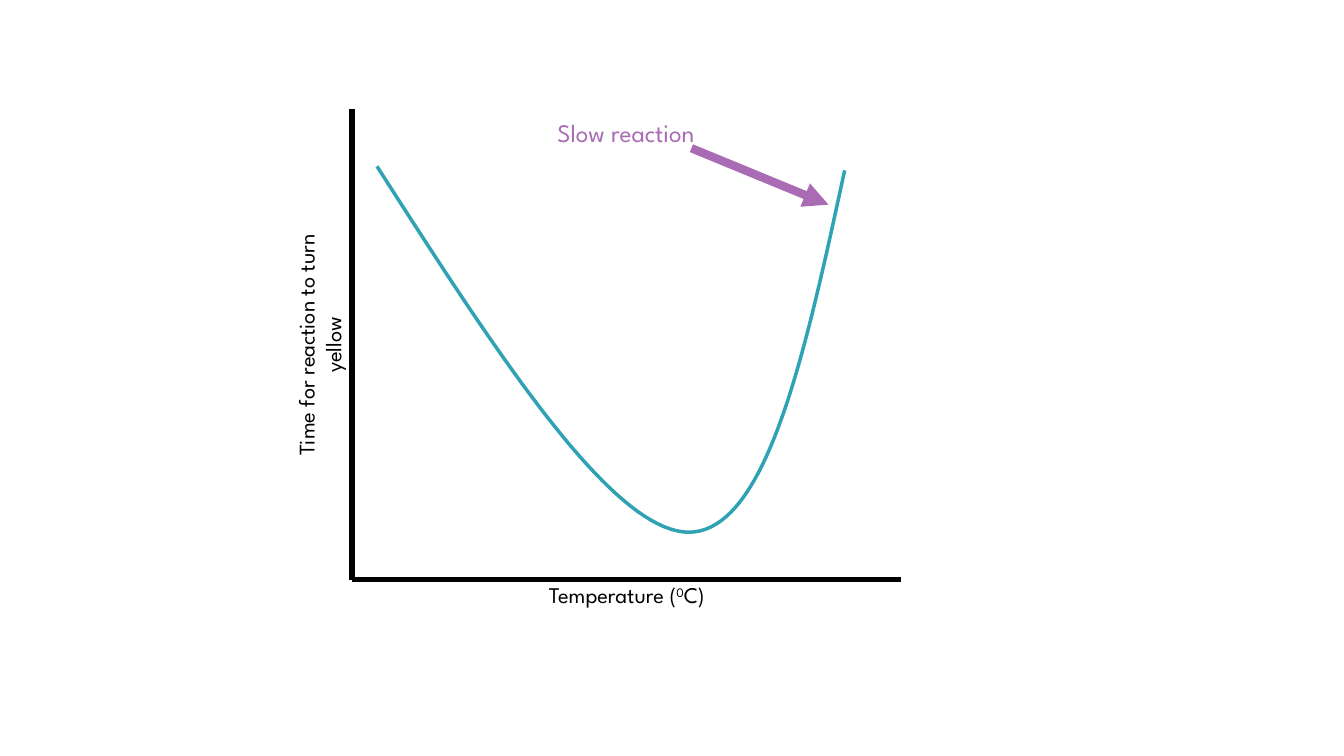
"""Build a slide with a sketch graph of reaction time against temperature."""
import pptx
import pptx.util
import pptx.dml.color
import pptx.enum.shapes
import pptx.enum.text
import pptx.oxml.ns
import lxml.etree

Pt = pptx.util.Pt
BLACK, TEAL, PURPLE = "000000", "2FA2B4", "A96CB4"
CURVE_STEPS = 40


def color(hex_code):
    return pptx.dml.color.RGBColor.from_string(hex_code)


deck = pptx.Presentation()
deck.slide_width, deck.slide_height = Pt(960), Pt(540)
slide = deck.slides.add_slide(deck.slide_layouts[6])

origin_x, origin_y = 251.3, 414
lines = [
    (origin_x, 77.8, origin_x, origin_y, BLACK, 4, False),
    (643.7, origin_y, origin_x, origin_y, BLACK, 4, False),
    (493.9, 105.9, 591.8, 146.2, PURPLE, 6, True),
]

curve_segments = [
    ((269.3, 118.8), (352.8, 249.1), (436.3, 379.4), (491.8, 380.2)),
    ((491.8, 380.2), (547.9, 380.2), (575.3, 251.3), (603.4, 121.7)),
]
curve_points = []
for segment in curve_segments:
    for step in range(1, CURVE_STEPS + 1):
        t = step / CURVE_STEPS
        weights = ((1 - t) ** 3, 3 * t * (1 - t) ** 2, 3 * t ** 2 * (1 - t), t ** 3)
        curve_points.append(tuple(
            Pt(sum(weight * point[axis] for weight, point in zip(weights, segment)))
            for axis in (0, 1)))
start_x, start_y = curve_segments[0][0]
curve_builder = slide.shapes.build_freeform(Pt(start_x), Pt(start_y))
curve_builder.add_line_segments(curve_points, close=False)
curve = curve_builder.convert_to_shape()
curve.shadow.inherit = False
curve.fill.background()
curve.line.color.rgb = color(TEAL)
curve.line.width = Pt(2.5)

for x1, y1, x2, y2, line_color, width, has_arrow in lines:
    connector = slide.shapes.add_connector(
        pptx.enum.shapes.MSO_CONNECTOR.STRAIGHT, Pt(x1), Pt(y1), Pt(x2), Pt(y2))
    connector.line.color.rgb = color(line_color)
    connector.line.width = Pt(width)
    properties = connector.element.spPr
    lxml.etree.SubElement(properties, pptx.oxml.ns.qn("a:effectLst"))
    if has_arrow:
        outline = properties.find(pptx.oxml.ns.qn("a:ln"))
        lxml.etree.SubElement(outline, pptx.oxml.ns.qn("a:tailEnd"), type="triangle")

labels = [
    (138.2, 223.2, 180, 46.1, 270, 16, BLACK, [("Time for reaction to turn yellow", 0)]),
    (357.8, 411.8, 180, 26.6, 0, 16, BLACK, [("Temperature (", 0), ("0", 30), ("C)", 0)]),
    (385.2, 80.6, 123.8, 51.1, 0, 18, PURPLE, [("Slow reaction", 0)]),
]
for left, top, width, height, rotation, size, text_color, pieces in labels:
    label = slide.shapes.add_textbox(Pt(left), Pt(top), Pt(width), Pt(height))
    label.rotation = rotation
    label.text_frame.word_wrap = True
    label.text_frame.auto_size = pptx.enum.text.MSO_AUTO_SIZE.SHAPE_TO_FIT_TEXT
    paragraph = label.text_frame.paragraphs[0]
    paragraph.alignment = pptx.enum.text.PP_ALIGN.CENTER
    for wording, raised_percent in pieces:
        run = paragraph.add_run()
        run.text = wording
        run.font.name = "League Spartan"
        run.font.size = Pt(size)
        run.font.color.rgb = color(text_color)
        if raised_percent:
            run.font._element.set("baseline", str(raised_percent * 1000))

deck.save("out.pptx")
